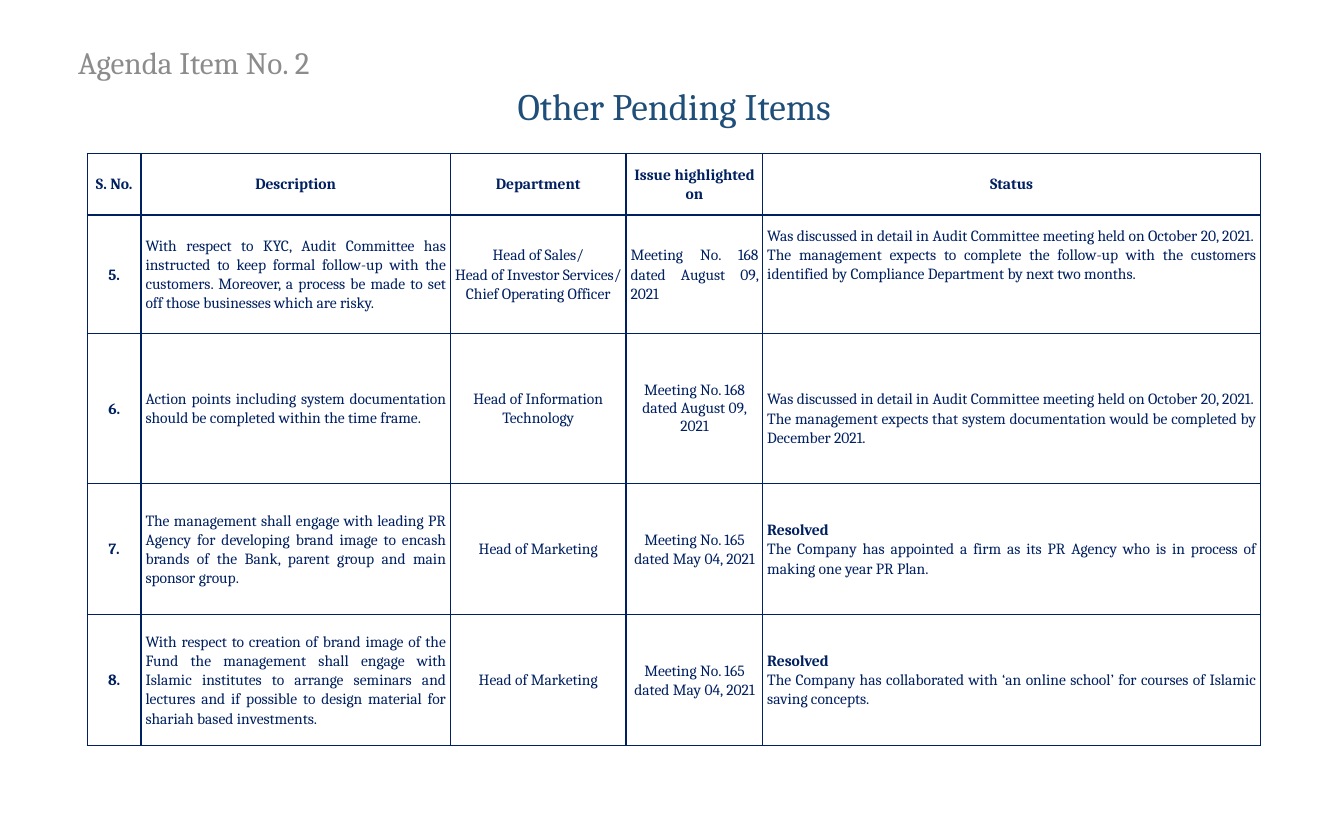
from dataclasses import dataclass

from lxml.etree import SubElement
from pptx import Presentation
from pptx.dml.color import RGBColor
from pptx.enum.text import MSO_ANCHOR as Anchor, PP_ALIGN as Align
from pptx.oxml.ns import qn
from pptx.slide import Slide
from pptx.table import _Cell as Cell
from pptx.util import Cm, Pt

FONT = "Cambria"
COLORS = {"agenda": "8C8C8C", "title": "1F4E79", "table": "002060", "cell": "FFFFFF"}
COLUMN_WIDTHS = (1.22, 7.01, 3.99, 3.1, 11.28)
HEADERS = ("S. No.", "Description", "Department", "Issue highlighted on", "Status")
HEADER_HEIGHT = 1.4
DISCUSSED = "Was discussed in detail in Audit Committee meeting held on October 20, 2021."
RESOLVED = "Resolved"
AUGUST = "Meeting No. 168 dated August 09, 2021"
MAY = "Meeting No. 165 dated May 04, 2021"


@dataclass
class Heading:
    text: str
    left: float
    top: float
    width: float
    height: float
    size: float
    color: str
    align: Align


@dataclass
class PendingItem:
    number: str
    description: str
    department: str
    meeting: str
    status: str
    height: float
    meeting_align: Align = Align.CENTER
    meeting_spacing: float = 1.07
    status_top: float = 0
    status_bottom: float = 0


HEADINGS = (
    Heading("Agenda Item No. 2", 1.52, 0.97, 6.48, 0.97, 20, "agenda", Align.LEFT),
    Heading("Other Pending Items", 6.83, 1.93, 16.92, 1.07, 24, "title", Align.CENTER),
)

ITEMS = (
    PendingItem(
        "5.",
        "With respect to KYC, Audit Committee has instructed to keep formal follow-up with the "
        "customers. Moreover, a process be made to set off those businesses which are risky.",
        "Head of Sales/\nHead of Investor Services/\nChief Operating Officer",
        AUGUST,
        f"{DISCUSSED}\nThe management expects to complete the follow-up with the customers "
        "identified by Compliance Department by next two months.",
        2.69,
        meeting_align=Align.JUSTIFY,
        status_bottom=0.88,
    ),
    PendingItem(
        "6.",
        "Action points including system documentation should be completed within the time frame.",
        "Head of Information Technology",
        AUGUST,
        f"{DISCUSSED}\nThe management expects that system documentation would be completed by "
        "December 2021.",
        3.4,
        meeting_spacing=1.0,
        status_top=0.44,
    ),
    PendingItem(
        "7.",
        "The management shall engage with leading PR Agency for developing brand image to encash "
        "brands of the Bank, parent group and main sponsor group.",
        "Head of Marketing",
        MAY,
        f"{RESOLVED}\nThe Company has appointed a firm as its PR Agency who is in process of "
        "making one year PR Plan.",
        2.97,
    ),
    PendingItem(
        "8.",
        "With respect to creation of brand image of the Fund the management shall engage with "
        "Islamic institutes to arrange seminars and lectures and if possible to design material "
        "for shariah based investments.",
        "Head of Marketing",
        MAY,
        f"{RESOLVED}\nThe Company has collaborated with ‘an online school’ for courses of "
        "Islamic saving concepts.",
        2.97,
    ),
)


def style_spans(para, size: float, color: str, bold: bool = False) -> None:
    for span in para.runs:
        span.font.name = FONT
        span.font.size = Pt(size)
        span.font.bold = bold
        span.font.color.rgb = RGBColor.from_string(COLORS[color])


def add_heading(page: Slide, heading: Heading) -> None:
    box = page.shapes.add_textbox(
        Cm(heading.left), Cm(heading.top), Cm(heading.width), Cm(heading.height)
    )
    frame = box.text_frame
    frame.word_wrap = True
    frame.vertical_anchor = Anchor.MIDDLE
    frame.text = heading.text
    para = frame.paragraphs[0]
    para.alignment = heading.align
    para.line_spacing = 0.9
    style_spans(para, heading.size, heading.color)


def add_borders(cell: Cell) -> None:
    properties = cell._tc.get_or_add_tcPr()
    for side in ("lnL", "lnR", "lnT", "lnB"):
        line = SubElement(properties, qn(f"a:{side}"), w=str(Pt(1)))
        SubElement(SubElement(line, qn("a:solidFill")), qn("a:srgbClr"), val=COLORS["table"])


def fill_cell(
    cell: Cell,
    text: str,
    align: Align = Align.CENTER,
    bold: bool = False,
    spacing: float = 1.07,
    top: float = 0,
    bottom: float = 0,
) -> None:
    add_borders(cell)
    cell.fill.solid()
    cell.fill.fore_color.rgb = RGBColor.from_string(COLORS["cell"])
    cell.vertical_anchor = Anchor.MIDDLE
    cell.margin_left = cell.margin_right = Cm(0.1)
    cell.margin_top, cell.margin_bottom = Cm(top), Cm(bottom)
    cell.text_frame.text = text
    for para in cell.text_frame.paragraphs:
        para.alignment = align
        para.line_spacing = spacing
        style_spans(para, 10, "table", bold or para.text == RESOLVED)


def add_items_table(page: Slide, items: tuple[PendingItem, ...]) -> None:
    heights = (HEADER_HEIGHT, *(item.height for item in items))
    table = page.shapes.add_table(
        len(heights), len(HEADERS), Cm(1.98), Cm(3.48), Cm(sum(COLUMN_WIDTHS)), Cm(sum(heights))
    ).table
    for column, width in zip(table.columns, COLUMN_WIDTHS):
        column.width = Cm(width)
    for row, height in zip(table.rows, heights):
        row.height = Cm(height)
    for cell, header in zip(table.rows[0].cells, HEADERS):
        fill_cell(cell, header, bold=True)
    for index, item in enumerate(items, 1):
        number, description, department, meeting, status = table.rows[index].cells
        fill_cell(number, item.number, bold=True)
        fill_cell(description, item.description, Align.JUSTIFY)
        fill_cell(department, item.department)
        fill_cell(meeting, item.meeting, item.meeting_align, spacing=item.meeting_spacing)
        fill_cell(
            status, item.status, Align.JUSTIFY, top=item.status_top, bottom=item.status_bottom
        )


def main() -> None:
    deck = Presentation()
    deck.slide_width, deck.slide_height = Cm(30.48), Cm(19.05)
    page = deck.slides.add_slide(deck.slide_layouts[6])
    for heading in HEADINGS:
        add_heading(page, heading)
    add_items_table(page, ITEMS)
    deck.save("out.pptx")


if __name__ == "__main__":
    main()
